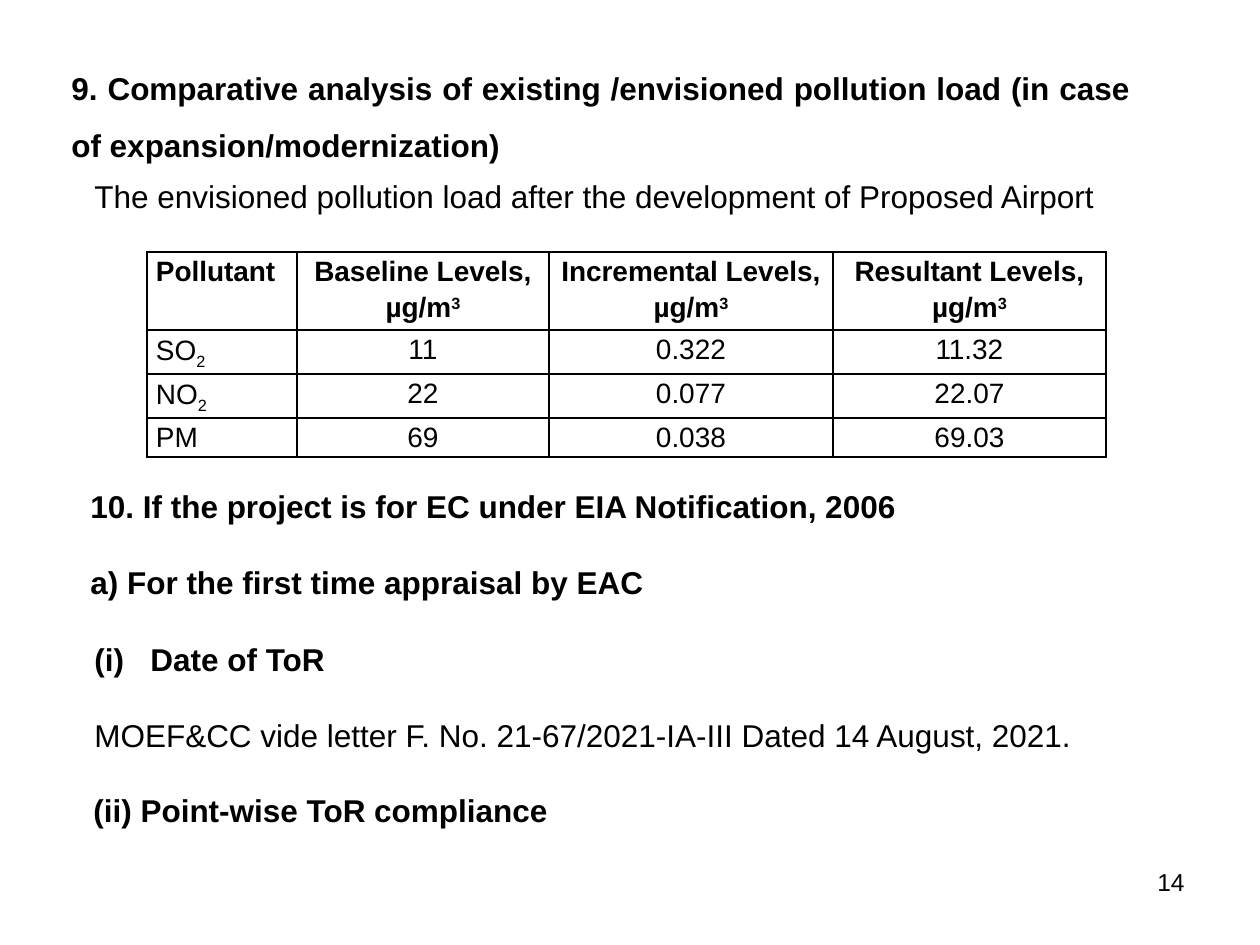
"""Build the slide on pollution load and terms of reference."""
from pptx import Presentation
from pptx.dml.color import RGBColor
from pptx.enum.text import MSO_AUTO_SIZE, PP_ALIGN as Align
from pptx.oxml import parse_xml
from pptx.oxml.ns import nsdecls
from pptx.util import Pt

PX = 914400 / 126
BLACK = RGBColor(0, 0, 0)


def px(count):
    return round(count * PX)


def style(para, size, bold, align):
    para.alignment = align
    for span in para.runs:
        span.font.name = "Arial"
        span.font.size = Pt(size)
        span.font.bold = bold
        span.font.color.rgb = BLACK


deck = Presentation()
deck.slide_width, deck.slide_height = px(1260), px(945)
page = deck.slides.add_slide(deck.slide_layouts[6])

TEXTS = [
    (59, 44, 1084, 127, 18, Align.JUSTIFY, 1.5,
     [("9. Comparative analysis of existing /envisioned pollution load "
       "(in case of expansion/modernization)", True)]),
    (82, 171, 1157, 50, 18, Align.LEFT, 1,
     [("The envisioned pollution load after the development of Proposed Airport", False)]),
    (78, 481, 977, 127, 18, Align.JUSTIFY, 1,
     [("10. If the project is for EC under EIA Notification, 2006", True),
      ("a) For the first time appraisal by EAC", True)]),
    (82, 634, 1040, 127, 18, Align.LEFT, 1,
     [("Date of ToR", True),
      ("MOEF&CC vide letter F. No. 21-67/2021-IA-III Dated 14 August, 2021.", False)]),
    (81, 785, 1179, 50, 18, Align.JUSTIFY, 1,
     [("(ii) Point-wise ToR compliance", True)]),
    (903, 861, 294, 65, 14, Align.RIGHT, 1, [("14", False)]),
]
for left, top, width, height, size, align, spacing, lines in TEXTS:
    box = page.shapes.add_textbox(px(left), px(top), px(width), px(height))
    frame = box.text_frame
    frame.word_wrap = True
    frame.auto_size = MSO_AUTO_SIZE.NONE
    frame.text = "\n".join(text for text, bold in lines)
    for index, (para, (text, bold)) in enumerate(zip(frame.paragraphs, lines)):
        style(para, size, bold, align)
        para.line_spacing = spacing
        para.space_before = Pt(22 if index else 0)
        if text == "Date of ToR":
            props = para._p.get_or_add_pPr()
            props.set("marL", str(px(56)))
            props.set("indent", str(px(-56)))
            props.append(parse_xml(
                f'<a:buAutoNum {nsdecls("a")} type="romanLcParenBoth"/>'))

COLUMNS = [150, 252, 284, 273]
HEIGHTS = [78, 44, 44, 39]
ROWS = [
    ["Pollutant", "Baseline Levels,\nµg/m^3", "Incremental Levels,\nµg/m^3",
     "Resultant Levels,\nµg/m^3"],
    ["SO_2", "11", "0.322", "11.32"],
    ["NO_2", "22", "0.077", "22.07"],
    ["PM", "69", "0.038", "69.03"],
]
BASELINES = {"^": "30000", "_": "-25000"}

grid = page.shapes.add_table(len(ROWS), len(COLUMNS), px(147), px(252),
                             px(sum(COLUMNS)), px(sum(HEIGHTS))).table
grid.first_row = grid.horz_banding = False
for column, width in zip(grid.columns, COLUMNS):
    column.width = px(width)
for row, height in zip(grid.rows, HEIGHTS):
    row.height = px(height)

for r, values in enumerate(ROWS):
    for c, value in enumerate(values):
        cell = grid.cell(r, c)
        cell.margin_left = cell.margin_right = px(9)
        cell.margin_top = cell.margin_bottom = 0
        cell.text_frame.text = value
        for para in cell.text_frame.paragraphs:
            for mark, baseline in BASELINES.items():
                base, found, script = para.text.partition(mark)
                if found:
                    para.text = base
                    span = para.add_run()
                    span.text = script
                    span.font._element.set("baseline", baseline)
            style(para, 16, r == 0, Align.CENTER if c else Align.JUSTIFY)
            para.line_spacing = 1.15
        props = cell._tc.get_or_add_tcPr()
        for side in "LRTB":
            props.append(parse_xml(
                f'<a:ln{side} {nsdecls("a")} w="12700"><a:solidFill>'
                f'<a:srgbClr val="{BLACK}"/></a:solidFill></a:ln{side}>'))
        cell.fill.background()

deck.save("out.pptx")
